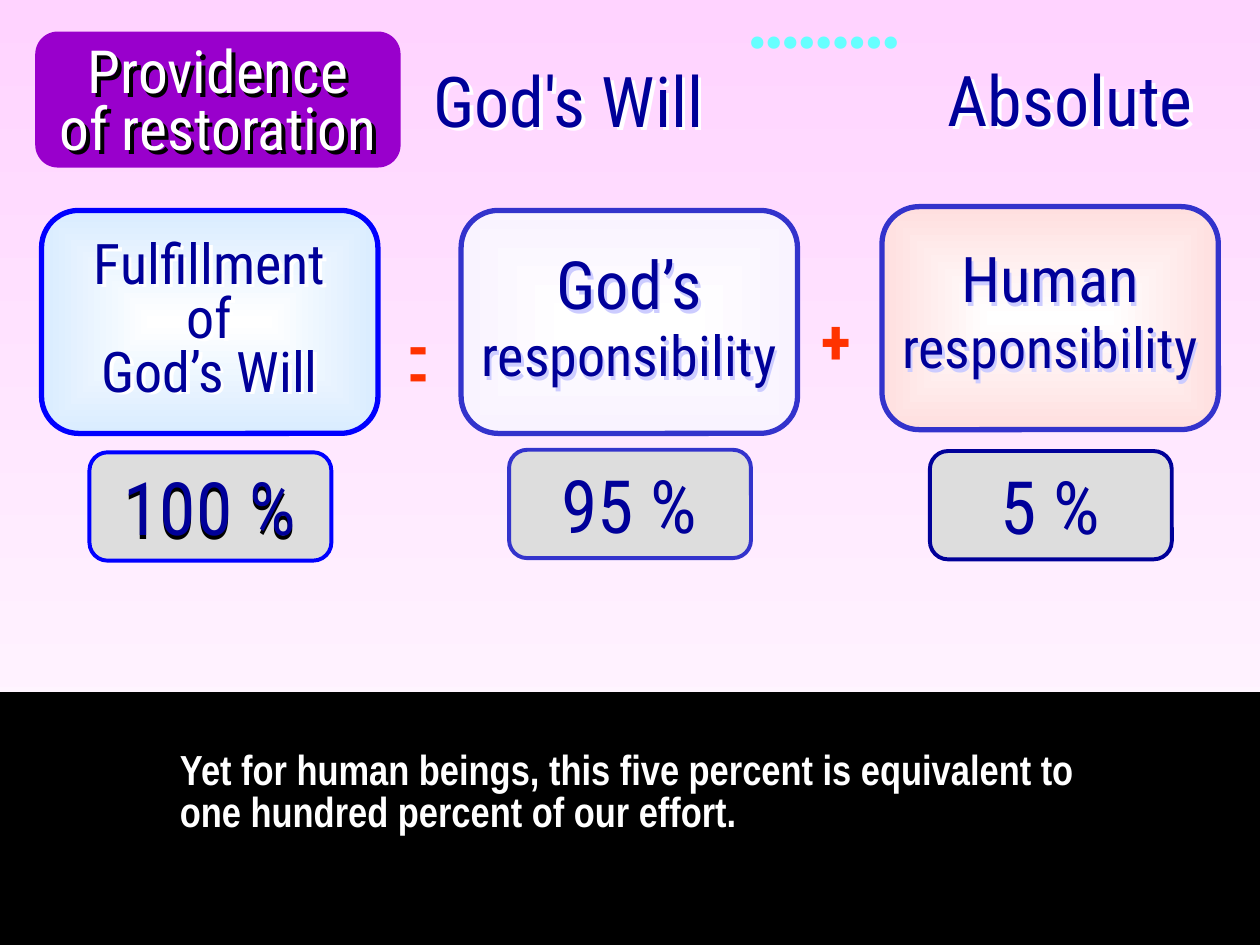
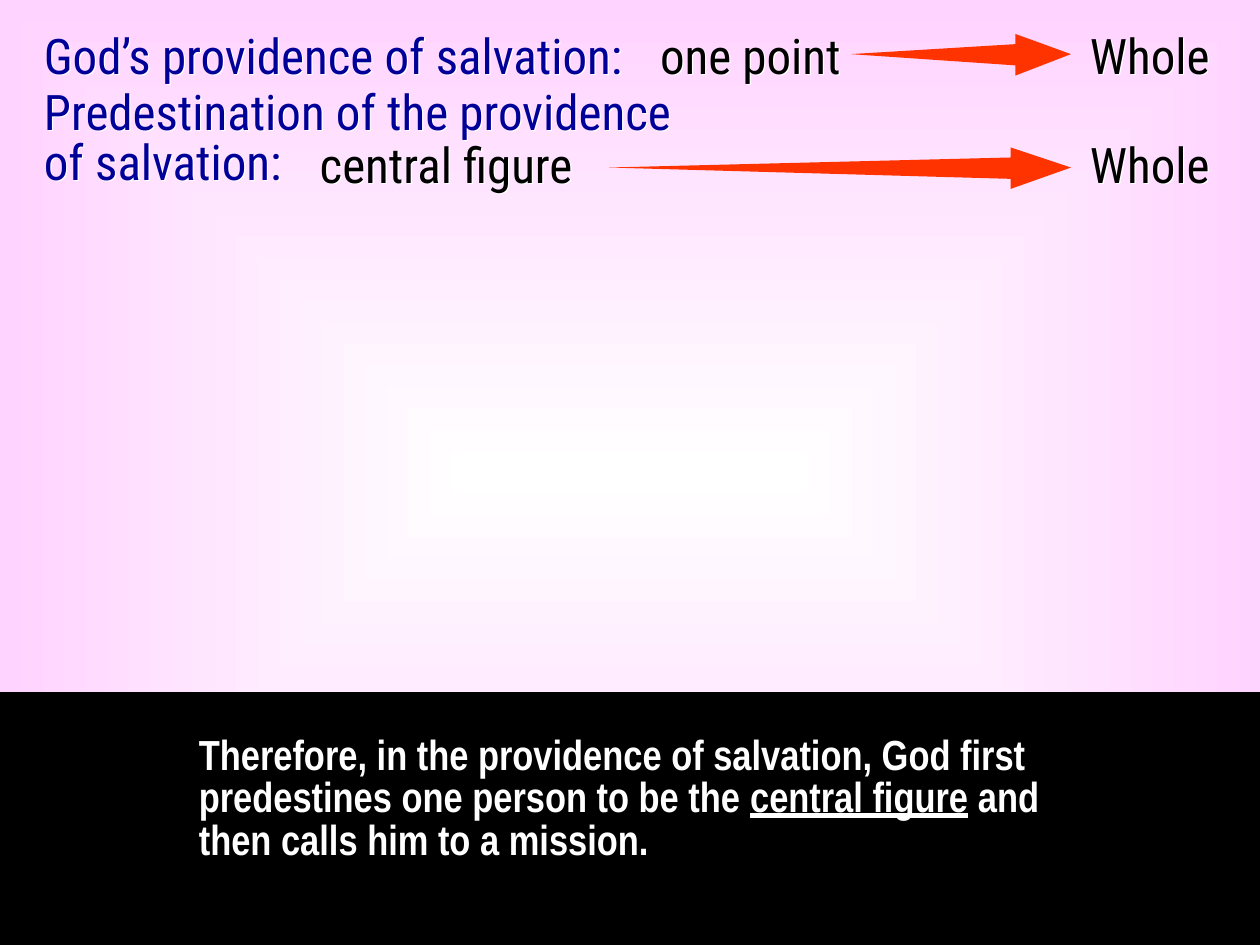
from dataclasses import dataclass
from math import atan2, degrees, hypot
from typing import NamedTuple, Optional

from lxml.etree import SubElement
from pptx import Presentation
from pptx.dml.color import RGBColor
from pptx.dml.fill import FillFormat
from pptx.enum.shapes import MSO_SHAPE
from pptx.enum.text import MSO_ANCHOR, MSO_AUTO_SIZE, PP_ALIGN
from pptx.oxml.ns import qn
from pptx.oxml.xmlchemy import BaseOxmlElement
from pptx.shapes.autoshape import Shape
from pptx.slide import Slide
from pptx.util import Pt

PX = 9144
PAGE_WIDTH, PAGE_HEIGHT = 1000, 750
BAND_TOP = 550
CARD_WIDTH, CARD_HEIGHT = 267, 177
PILL_WIDTH, PILL_HEIGHT = 192, 86
LABEL_WIDTH = 283

TITLE_FONT = "Roboto Condensed"
CAPTION_FONT = "Arial Narrow"
DOTS_FONT = "Montserrat"

BLACK = RGBColor(0x00, 0x00, 0x00)
WHITE = RGBColor(0xFF, 0xFF, 0xFF)
PINK = RGBColor(0xFF, 0xD3, 0xFF)
NAVY = RGBColor(0x00, 0x00, 0x99)
BLUE = RGBColor(0x00, 0x00, 0xFF)
INDIGO = RGBColor(0x33, 0x33, 0xCC)
PURPLE = RGBColor(0x99, 0x00, 0xCC)
RED = RGBColor(0xFF, 0x33, 0x00)
CYAN = RGBColor(0x66, 0xFF, 0xFF)
GREY = RGBColor(0xDD, 0xDD, 0xDD)
LAVENDER = RGBColor(0xCC, 0xCC, 0xFF)
PALE_BLUE = RGBColor(0xD9, 0xEC, 0xFF)
PALE_VIOLET = RGBColor(0xF9, 0xF3, 0xFF)
PALE_RED = RGBColor(0xFF, 0xDF, 0xDF)


class Box(NamedTuple):
    left: int
    top: int
    width: int
    height: int

    def emu(self) -> tuple[int, ...]:
        return tuple(length * PX for length in self)


class Shadow(NamedTuple):
    color: RGBColor
    right: int
    down: int


class Span(NamedTuple):
    text: str
    size: int
    color: RGBColor = NAVY
    font: str = TITLE_FONT
    bold: bool = False
    underline: bool = False


@dataclass(frozen=True)
class Label:
    box: Box
    paras: list[list[Span]]
    shadow: Optional[Shadow] = None
    spacing: float = 1.0
    align: PP_ALIGN = PP_ALIGN.CENTER
    anchor: MSO_ANCHOR = MSO_ANCHOR.TOP
    wrap: bool = True
    rotation: int = 0


@dataclass(frozen=True)
class Card:
    top: int
    tint: RGBColor
    line: RGBColor
    label_top: int
    words: list[tuple[str, int]]
    spacing: float
    shadow: Shadow
    pill_top: int
    pill_line: RGBColor
    percent: str
    percent_shadow: Optional[Shadow] = None


SOFT_WHITE = Shadow(WHITE, 3, 2)
THIN_WHITE = Shadow(WHITE, 1, 1)
SOFT_LAVENDER = Shadow(LAVENDER, 2, 3)

CARDS = [
    Card(167, PALE_BLUE, BLUE, 187,
         [("Fulfillment", 32), ("of", 32), ("God’s Will", 32)], 0.8, SOFT_WHITE,
         359, BLUE, "100 %", Shadow(BLACK, 0, 3)),
    Card(167, PALE_VIOLET, INDIGO, 193,
         [("God’s", 38), ("responsibility", 32)], 0.95, SOFT_LAVENDER,
         357, INDIGO, "95 %"),
    Card(164, PALE_RED, INDIGO, 190,
         [("Human", 36), ("responsibility", 32)], 0.95, SOFT_LAVENDER,
         358, NAVY, "5 %"),
]


def set_gradient(fill: FillFormat, owner: BaseOxmlElement, start: RGBColor,
                 end: RGBColor, centred: bool) -> None:
    fill.gradient()
    for stop, color in zip(fill.gradient_stops, (start, end)):
        stop.color.rgb = color
    fill.gradient_angle = 270
    if centred:
        gradient = owner.find(".//" + qn("a:gradFill"))
        gradient.remove(gradient.find(qn("a:lin")))
        route = SubElement(gradient, qn("a:path"), {"path": "shape"})
        SubElement(route, qn("a:fillToRect"), {side: "50000" for side in "ltrb"})


def add_shadow(shape: Shape, shadow: Shadow) -> None:
    effects = SubElement(shape.element.spPr, qn("a:effectLst"))
    outer = SubElement(effects, qn("a:outerShdw"), {
        "dist": str(round(hypot(shadow.right, shadow.down) * PX)),
        "dir": str(round(degrees(atan2(shadow.down, shadow.right)) * 60000)),
        "algn": "ctr",
        "rotWithShape": "0",
    })
    SubElement(outer, qn("a:srgbClr"), {"val": str(shadow.color)})


def add_panel(page: Slide, kind: MSO_SHAPE, box: Box, color: RGBColor,
              line: Optional[RGBColor] = None, weight: float = 0) -> Shape:
    panel = page.shapes.add_shape(kind, *box.emu())
    panel.shadow.inherit = False
    panel.fill.solid()
    panel.fill.fore_color.rgb = color
    if line is None:
        panel.line.fill.background()
    else:
        panel.line.color.rgb = line
        panel.line.width = Pt(weight)
    return panel


def add_label(page: Slide, label: Label) -> None:
    shape = page.shapes.add_textbox(*label.box.emu())
    shape.rotation = label.rotation
    frame = shape.text_frame
    frame.word_wrap = label.wrap
    frame.auto_size = MSO_AUTO_SIZE.SHAPE_TO_FIT_TEXT if label.wrap else MSO_AUTO_SIZE.NONE
    frame.vertical_anchor = label.anchor
    for index, spans in enumerate(label.paras):
        para = frame.add_paragraph() if index else frame.paragraphs[0]
        para.alignment = label.align
        para.line_spacing = label.spacing
        for span in spans:
            run = para.add_run()
            run.text = span.text
            run.font.name = span.font
            run.font.size = Pt(span.size)
            run.font.bold = span.bold
            run.font.underline = span.underline
            run.font.color.rgb = span.color
    if label.shadow:
        add_shadow(shape, label.shadow)


def add_caption(page: Slide, box: Box, parts: list[tuple[str, bool]]) -> None:
    add_panel(page, MSO_SHAPE.RECTANGLE,
              Box(0, BAND_TOP, PAGE_WIDTH, PAGE_HEIGHT - BAND_TOP), BLACK, BLACK, 0.75)
    spans = [Span(text, 24, WHITE, CAPTION_FONT, True, underline)
             for text, underline in parts]
    add_label(page, Label(box, [spans], spacing=0.85, align=PP_ALIGN.LEFT))


def add_card(page: Slide, column: int, card: Card) -> None:
    left = (100 + PAGE_WIDTH * column) // 3
    panel = add_panel(page, MSO_SHAPE.ROUNDED_RECTANGLE,
                      Box(left, card.top, CARD_WIDTH, CARD_HEIGHT), WHITE, card.line, 3)
    set_gradient(panel.fill, panel.element, WHITE, card.tint, True)
    add_label(page, Label(
        Box(left + (CARD_WIDTH - LABEL_WIDTH) // 2, card.label_top, LABEL_WIDTH, 120),
        [[Span(text, size)] for text, size in card.words], card.shadow, card.spacing))
    pill = Box(left + 38, card.pill_top, PILL_WIDTH, PILL_HEIGHT)
    add_panel(page, MSO_SHAPE.ROUNDED_RECTANGLE, pill, GREY, card.pill_line, 2.25)
    add_label(page, Label(Box(pill.left + 10, pill.top + 3, PILL_WIDTH - 21, 80),
                          [[Span(card.percent, 42)]], card.percent_shadow))


def add_triangle(page: Slide, base: int, point: int, top: int, middle: int,
                 bottom: int) -> None:
    outline = page.shapes.build_freeform(base, top, scale=PX)
    outline.add_line_segments([(point, middle), (base, bottom)])
    triangle = outline.convert_to_shape()
    triangle.shadow.inherit = False
    triangle.fill.solid()
    triangle.fill.fore_color.rgb = RED
    triangle.line.fill.background()


def add_tapered_arrow(page: Slide, tail: int, neck: int, tip: int, middle: int) -> None:
    add_triangle(page, neck, tip, middle - 16, middle, middle + 17)
    add_triangle(page, neck + 1, tail, middle - 8, middle, middle + 9)


def build_equation_page(page: Slide) -> None:
    set_gradient(page.background.fill, page.element, PINK, WHITE, False)
    add_caption(page, Box(133, 591, 742, 78), [
        ("Yet for human beings, this five percent is equivalent to "
         "one hundred percent of our effort.", False)])
    add_panel(page, MSO_SHAPE.ROUNDED_RECTANGLE, Box(28, 25, 290, 108), PURPLE)
    add_label(page, Label(
        Box(21, 33, 304, 101),
        [[Span(text, 34, WHITE)] for text in ("Providence", "of restoration")],
        Shadow(BLACK, 3, 3), 0.8))
    add_label(page, Label(Box(325, 41, 252, 77), [[Span("God's Will", 40)]], SOFT_WHITE))
    add_label(page, Label(Box(741, 40, 217, 77), [[Span("Absolute", 40)]], SOFT_WHITE,
                          anchor=MSO_ANCHOR.MIDDLE, wrap=False))
    add_label(page, Label(Box(583, 75, 142, 9),
                          [[Span("……...", 36, CYAN, DOTS_FONT, True)]],
                          wrap=False, rotation=180))
    for sign, box in (("+", Box(642, 234, 43, 50)),
                      ("-", Box(314, 239, 36, 14)),
                      ("-", Box(314, 261, 36, 14))):
        add_label(page, Label(box, [[Span(sign, 36, RED, bold=True)]], wrap=False))
    for column, card in enumerate(CARDS):
        add_card(page, column, card)


def build_salvation_page(page: Slide) -> None:
    set_gradient(page.background.fill, page.element, WHITE, PINK, True)
    add_caption(page, Box(148, 579, 702, 112), [
        ("Therefore, in the providence of salvation, God first "
         "predestines one person to be the ", False),
        ("central figure", True),
        (" and then calls him to a mission.", False)])
    for text, box, spacing in (
            ("God’s providence of salvation:", Box(25, 15, 500, 57), 1.0),
            ("Predestination of the providence of salvation:", Box(25, 67, 542, 90), 0.85)):
        add_label(page, Label(box, [[Span(text, 28)]], THIN_WHITE, spacing, PP_ALIGN.LEFT))
    for text, box, spacing in (
            ("one point", Box(508, 15, 175, 57), 1.0),
            ("Whole", Box(850, 15, 125, 57), 1.0),
            ("central figure", Box(233, 107, 242, 52), 0.9),
            ("Whole", Box(850, 107, 125, 52), 0.9)):
        add_label(page, Label(box, [[Span(text, 28, BLACK)]], THIN_WHITE, spacing))
    add_tapered_arrow(page, 675, 806, 850, 43)
    add_tapered_arrow(page, 483, 802, 850, 133)


def main() -> None:
    deck = Presentation()
    deck.slide_width = PAGE_WIDTH * PX
    deck.slide_height = PAGE_HEIGHT * PX
    for build in (build_equation_page, build_salvation_page):
        build(deck.slides.add_slide(deck.slide_layouts[6]))
    deck.save("out.pptx")


if __name__ == "__main__":
    main()
